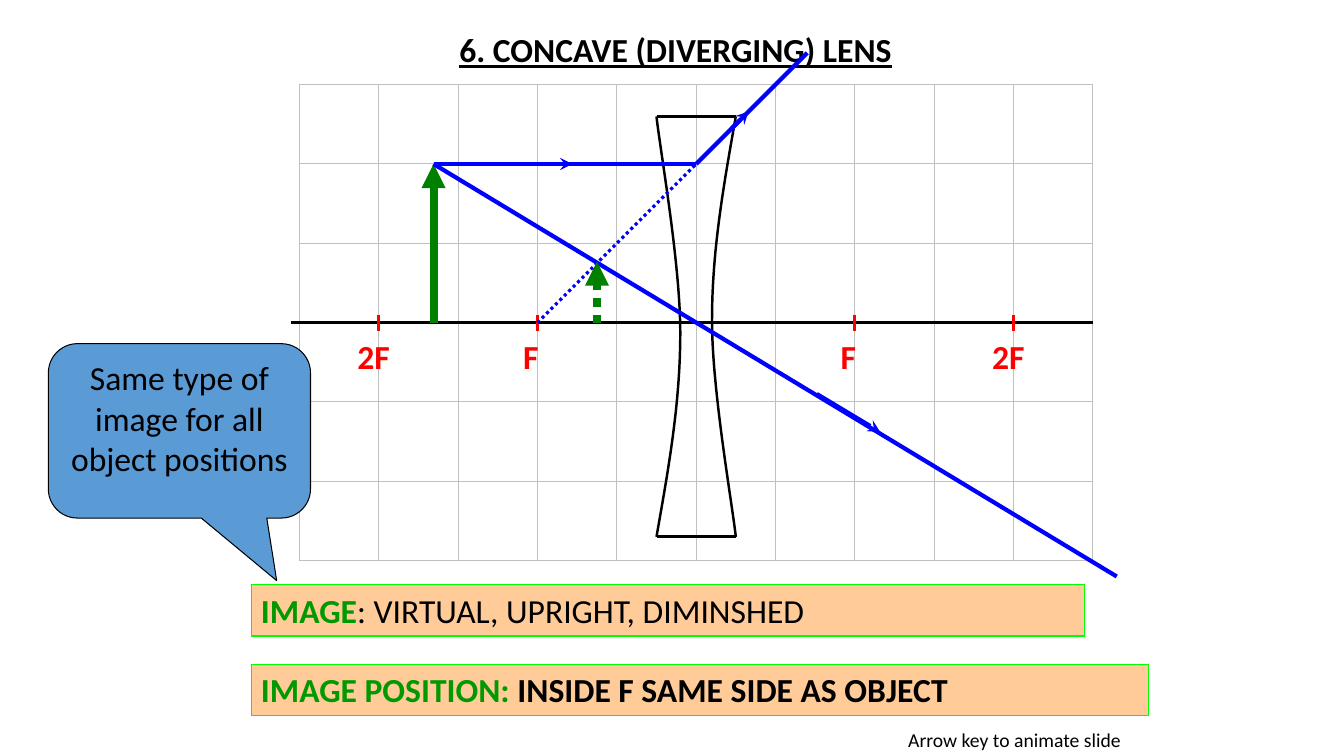
from lxml import etree
from pptx import Presentation
from pptx import util as u
from pptx.dml.color import RGBColor
from pptx.enum import dml, shapes, text
from pptx.oxml.ns import qn

COLORS = {"grid": "C0C0C0", "ink": "000000", "focus": "FF0000", "object": "008000",
          "ray": "0000FF", "term": "009900", "panel": "FFCC99", "edge": "00FF00",
          "callout": "5B9BD5"}
CELL, LEFT, TOP = 0.787, 2.97, 0.84
COLS, ROWS, AXIS, CENTRE = 10, 6, 3, 5
OBJECT, IMAGE = 1.69, 3.75
LENS_TOP, LENS_BOTTOM = 0.4, 5.7
DOT = dml.MSO_LINE.ROUND_DOT


def rgb(name):
    return RGBColor.from_string(COLORS[name])


def at(col, row):
    """Slide position of a point given in grid columns and rows."""
    return u.Inches(LEFT + col * CELL), u.Inches(TOP + row * CELL)


def style_line(sp, color, width):
    sp.line.color.rgb = rgb(color)
    sp.line.width = u.Pt(width)


def add_line(slide, start, end, color, width, head=None, dash=None):
    cn = slide.shapes.add_connector(shapes.MSO_CONNECTOR.STRAIGHT, *at(*start), *at(*end))
    style_line(cn, color, width)
    if dash:
        cn.line.dash_style = dash
    if head:
        etree.SubElement(cn.line._get_or_add_ln(), qn("a:tailEnd"), type=head)
    etree.SubElement(cn._element.spPr, qn("a:effectLst"))


def add_ray(slide, start, end, arrow_start, arrow_end):
    add_line(slide, start, end, "ray", 3)
    add_line(slide, arrow_start, arrow_end, "ray", 3, "stealth")


def write(sp, runs, align=text.PP_ALIGN.LEFT, anchor=text.MSO_ANCHOR.TOP):
    """Fill a shape with one paragraph of (text, colour, font values) runs."""
    tf = sp.text_frame
    tf.word_wrap = True
    tf.vertical_anchor = anchor
    p = tf.paragraphs[0]
    p.alignment = align
    for words, color, values in runs:
        r = p.add_run()
        r.text = words
        r.font.color.rgb = rgb(color)
        for name, value in {"name": "Calibri", "size": u.Pt(24), **values}.items():
            setattr(r.font, name, value)


def add_label(slide, box, words, color="ink", align=text.PP_ALIGN.LEFT, **values):
    tb = slide.shapes.add_textbox(*map(u.Inches, box))
    write(tb, [(words, color, values)], align)


def add_box(slide, kind, box, fill, edge):
    sp = slide.shapes.add_shape(kind, *map(u.Inches, box))
    sp.shadow.inherit = False
    sp.fill.solid()
    sp.fill.fore_color.rgb = rgb(fill)
    style_line(sp, edge, 0.75)
    return sp


def add_panel(slide, top, width, runs):
    sp = add_box(slide, shapes.MSO_SHAPE.RECTANGLE, (2.49, top, width, 0.51), "panel", "edge")
    write(sp, runs)


def bezier(a, b, c, d, steps=24):
    for i in range(steps + 1):
        t = i / steps
        s = 1 - t
        yield tuple(s**3 * w + 3 * s * s * t * x + 3 * s * t * t * y + t**3 * z
                    for w, x, y, z in zip(a, b, c, d))


def add_curve(slide, points):
    points = [at(*point) for point in points]
    fb = slide.shapes.build_freeform(*points[0])
    fb.add_line_segments(points[1:], close=False)
    sp = fb.convert_to_shape()
    sp.shadow.inherit = False
    sp.fill.background()
    style_line(sp, "ink", 1.75)


def add_lens(slide):
    waist = (5.2, 2.97)
    right = [*bezier((5.5, LENS_TOP), (5.35, 1.25), (5.2, 2.08), waist),
             *bezier(waist, (5.2, 3.85), (5.45, 5.25), (5.5, LENS_BOTTOM))]
    # The left face is the right face turned half a circle.
    left = [(2 * CENTRE - x, LENS_TOP + LENS_BOTTOM - y) for x, y in right]
    for face in (right, left):
        add_curve(slide, face)


def add_lens_ends(slide):
    for row in (LENS_BOTTOM, LENS_TOP):
        add_line(slide, (4.5, row), (5.5, row), "ink", 2.25)


def add_grid(slide):
    for col in range(COLS + 1):
        add_line(slide, (col, 0), (col, ROWS), "grid", 0.75)
    for row in range(ROWS + 1):
        if row != AXIS:
            add_line(slide, (0, row), (COLS, row), "grid", 0.75)


def add_axis(slide):
    add_line(slide, (-0.1, AXIS), (COLS, AXIS), "ink", 2)
    for steps, name, shift in ((1, "F", 0.24), (2, "2F", 0.31)):
        for col in (CENTRE - 2 * steps, CENTRE + 2 * steps):
            add_line(slide, (col, AXIS - 0.1), (col, AXIS + 0.1), "focus", 2)
            add_label(slide, (LEFT + col * CELL - shift, 3.28, 0.63, 0.5),
                      name, "focus", bold=True)


def main():
    prs = Presentation()
    prs.slide_width, prs.slide_height = u.Inches(13.33), u.Inches(7.5)
    slide = prs.slides.add_slide(prs.slide_layouts[6])

    add_grid(slide)
    add_lens(slide)
    add_axis(slide)
    add_label(slide, (3.67, 0.24, 6.06, 0.5), "6. CONCAVE (DIVERGING) LENS",
              align=text.PP_ALIGN.CENTER, bold=True, underline=True)

    tip = (OBJECT, 1)
    add_line(slide, (OBJECT, AXIS), tip, "object", 5.75, "triangle")
    add_ray(slide, tip, (CENTRE, 1), (2.72, 1), (3.44, 1))
    add_ray(slide, tip, (10.3, 6.2), (6.52, 3.9), (7.32, 4.38))
    add_ray(slide, (CENTRE, 1), (6.4, -0.4), (5.45, 0.55), (5.66, 0.34))

    add_panel(slide, 5.8, 8.27, [("IMAGE", "term", {"bold": True}),
                                 (": VIRTUAL, UPRIGHT, DIMINSHED", "ink", {})])
    add_panel(slide, 6.59, 8.9, [("IMAGE POSITION: ", "term", {"bold": True}),
                                 ("INSIDE F SAME SIDE AS OBJECT", "ink", {"bold": True})])
    add_label(slide, (8.91, 7.17, 2.76, 0.33), "Arrow key to animate slide", size=u.Pt(14))

    add_lens_ends(slide)
    add_line(slide, (3, AXIS), (CENTRE, 1), "ray", 2.25, dash=DOT)
    add_line(slide, (IMAGE, AXIS), (IMAGE, 2.23), "object", 5.75, "triangle", DOT)

    callout = add_box(slide, shapes.MSO_SHAPE.ROUNDED_RECTANGULAR_CALLOUT,
                      (0.48, 3.41, 2.6, 1.73), "callout", "ink")
    for i, value in enumerate((0.371, 0.859, 0.167)):
        callout.adjustments[i] = value
    write(callout, [("Same type of image for all object positions", "ink", {})],
          text.PP_ALIGN.CENTER)
    prs.save("out.pptx")


if __name__ == "__main__":
    main()
